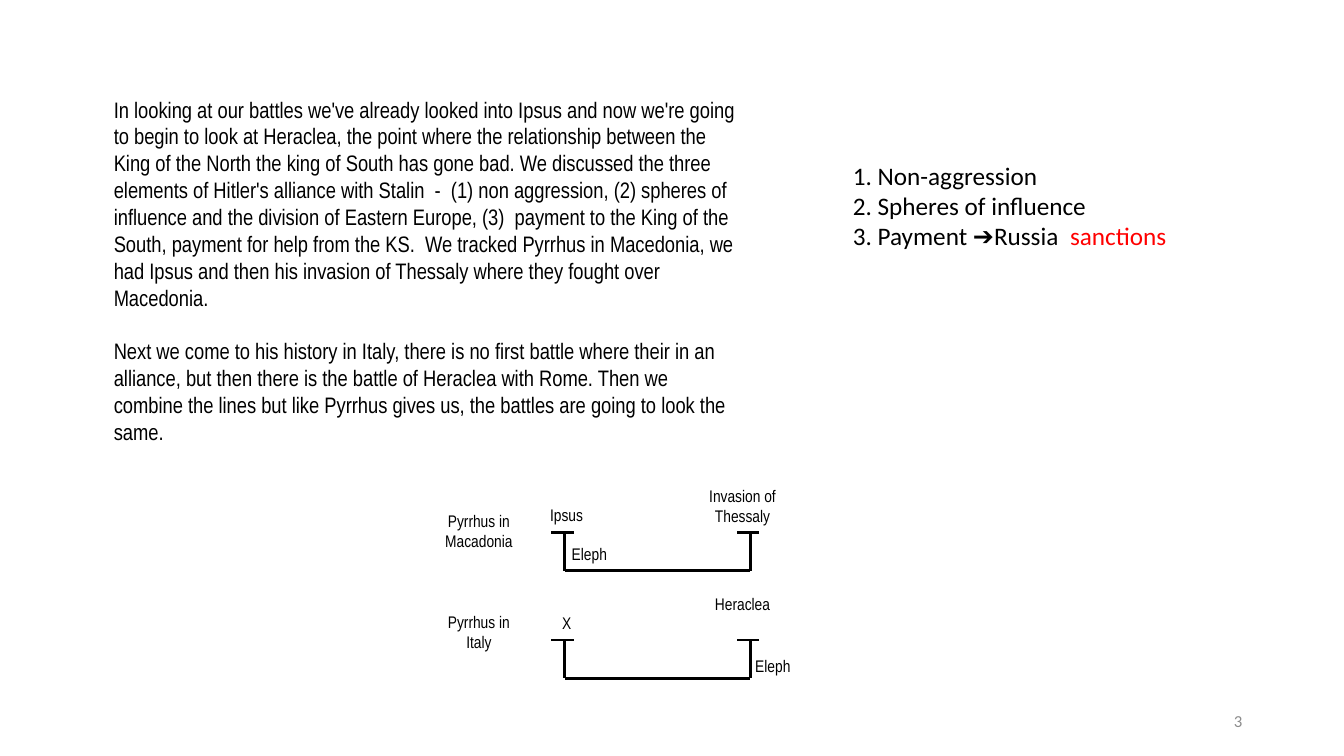
from lxml.etree import SubElement
from pptx import Presentation
from pptx.dml.color import RGBColor
from pptx.enum.shapes import MSO_CONNECTOR
from pptx.enum.text import MSO_ANCHOR, PP_ALIGN
from pptx.oxml.ns import qn
from pptx.util import Pt

EMU_PER_PX = 9144  # 100 px to the inch
COLORS = {"ink": "000000", "accent": "FF0000", "muted": "8C8C8C"}

BATTLES = (
    "In looking at our battles we've already looked into Ipsus and now we're going to begin "
    "to look at Heraclea, the point where the relationship between the King of the North the "
    "king of South has gone bad. We discussed the three elements of Hitler's alliance with "
    "Stalin  -  (1) non aggression, (2) spheres of influence and the division of Eastern "
    "Europe, (3)  payment to the King of the South, payment for help from the KS.  We tracked "
    "Pyrrhus in Macedonia, we had Ipsus and then his invasion of Thessaly where they fought "
    "over Macedonia."
)
ITALY = (
    "Next we come to his history in Italy, there is no first battle where their in an "
    "alliance, but then there is the battle of Heraclea with Rome. Then we combine the lines "
    "but like Pyrrhus gives us, the battles are going to look the same."
)


def px(length):
    return length * EMU_PER_PX


def add_span(para, text, font, size, color="ink"):
    span = para.add_run()
    span.text = text
    span.font.name = font
    span.font.size = Pt(size)
    span.font.color.rgb = RGBColor.from_string(COLORS[color])


class SlideBuilder:
    narrow = "Arial Narrow"
    body = "Calibri"
    line_width = 2

    def __init__(self, page):
        self.page = page

    def text(self, at, paras, font, size, color="ink", align=PP_ALIGN.LEFT,
             anchor=MSO_ANCHOR.TOP, inset=None, gap=0):
        """Each paragraph is a string or a list of (text, color) spans."""
        box = self.page.shapes.add_textbox(*map(px, at))
        frame = box.text_frame
        frame.word_wrap = True
        frame.vertical_anchor = anchor
        if inset is not None:
            frame.margin_left = frame.margin_right = px(inset)
            frame.margin_top = frame.margin_bottom = px(inset)
        for index, spans in enumerate(paras):
            para = frame.add_paragraph() if index else frame.paragraphs[0]
            para.alignment = align
            if index and gap:
                para.space_before = Pt(gap)
            if isinstance(spans, str):
                spans = [(spans, color)]
            for words, span_color in spans:
                add_span(para, words, font, size, span_color)

    def label(self, left, top, width, height, *paras):
        self.text((left, top, width, height), paras, self.narrow, 12,
                  align=PP_ALIGN.CENTER, inset=4)

    def line(self, shapes, *ends):
        connector = shapes.add_connector(MSO_CONNECTOR.STRAIGHT, *map(px, ends))
        connector.line.color.rgb = RGBColor.from_string(COLORS["ink"])
        connector.line.width = Pt(self.line_width)
        properties = connector.element.find(qn("p:spPr"))
        SubElement(properties, qn("a:effectLst"))

    def bracket(self, left, right, top, bottom):
        """Draw a baseline with a capped post at each end, as one group."""
        shapes = self.page.shapes.add_group_shape().shapes
        self.line(shapes, left, bottom, right, bottom)
        for post in (left, right):
            self.line(shapes, post, top, post, bottom)
            self.line(shapes, post + 9, top, post - 13, top)

    def timeline(self, top, place, place_top, first, second):
        """Draw a bracket with its place and the battles at both ends."""
        self.bracket(560, 744, top, top + 38)
        self.label(534, top - 31, 56, 28, first)
        self.label(691, top - 50, 91, 47, second)
        self.label(431, place_top, 88, 47, "Pyrrhus in", place)


def main():
    deck = Presentation()
    deck.slide_width, deck.slide_height = px(1333), px(750)
    builder = SlideBuilder(deck.slides.add_slide(deck.slide_layouts[6]))

    builder.text((942, 695, 300, 40), ["3"], builder.body, 12, color="muted",
                 align=PP_ALIGN.RIGHT, anchor=MSO_ANCHOR.MIDDLE)
    builder.text((103, 90, 641, 390), [BATTLES, ITALY], builder.narrow, 16, gap=19)
    builder.text((836, 154, 375, 131), [
        "1. Non-aggression",
        "2. Spheres of influence",
        [("3. Payment ➔Russia  ", "ink"), ("sanctions", "accent")],
    ], builder.body, 18)

    builder.timeline(528, "Macadonia", 503, "Ipsus", "Invasion of Thessaly")
    builder.timeline(635, "Italy", 603, "X", "Heraclea")
    for left, top in ((562, 535), (744, 647)):
        builder.label(left, top, 45, 28, "Eleph")

    deck.save("out.pptx")


if __name__ == "__main__":
    main()
